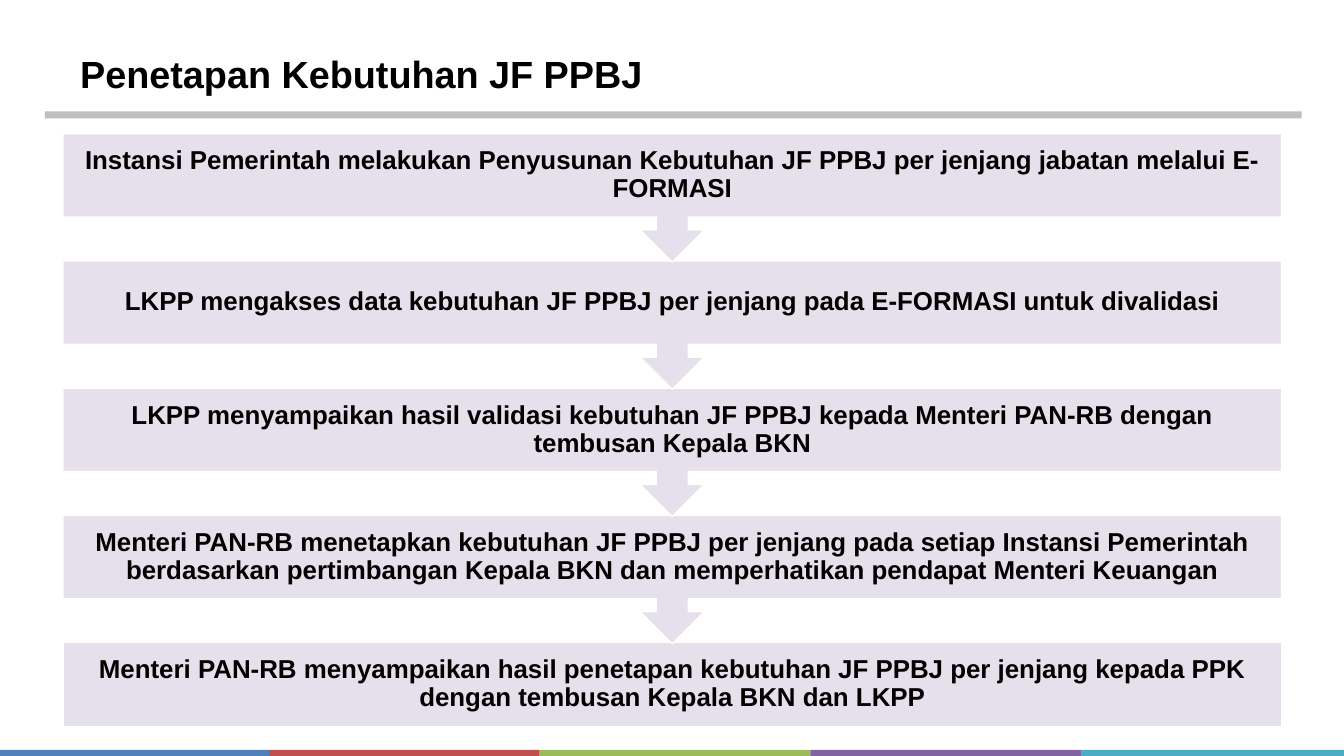
from dataclasses import dataclass

from pptx import Presentation
from pptx.dml.color import RGBColor
from pptx.enum.shapes import MSO_SHAPE
from pptx.enum.text import MSO_ANCHOR, PP_ALIGN
from pptx.util import Inches, Pt

RECT = MSO_SHAPE.RECTANGLE
CALLOUT = MSO_SHAPE.DOWN_ARROW_CALLOUT
TOP, MIDDLE = MSO_ANCHOR.TOP, MSO_ANCHOR.MIDDLE
LEFT, CENTER = PP_ALIGN.LEFT, PP_ALIGN.CENTER


@dataclass(frozen=True)
class Theme:
    """Colours, font and type sizes of the slide."""
    font: str = "Arial"
    title_size: int = 54
    step_size: int = 37
    text: str = "000000"
    rule: str = "BFBFBF"
    step: str = "E6E0EC"
    outline: str = "FFFFFF"
    stripes: tuple = ("4F81BD", "C0504D", "9BBB59", "8064A2", "4BACC6")


THEME = Theme()
TITLE = "Penetapan Kebutuhan JF PPBJ"
STEPS = (
    "Instansi Pemerintah melakukan Penyusunan Kebutuhan JF PPBJ per jenjang "
    "jabatan melalui E-FORMASI",
    "LKPP mengakses data kebutuhan JF PPBJ per jenjang pada E-FORMASI untuk "
    "divalidasi",
    "LKPP menyampaikan hasil validasi kebutuhan JF PPBJ kepada Menteri PAN-RB "
    "dengan tembusan Kepala BKN",
    "Menteri PAN-RB menetapkan kebutuhan JF PPBJ per jenjang pada setiap "
    "Instansi Pemerintah berdasarkan pertimbangan Kepala BKN dan "
    "memperhatikan pendapat Menteri Keuangan",
    "Menteri PAN-RB menyampaikan hasil penetapan kebutuhan JF PPBJ per jenjang "
    "kepada PPK dengan tembusan Kepala BKN dan LKPP",
)


def add_block(slide, kind, x, y, w, h, fill, outline=None):
    """Add a filled preset shape, outlined if a colour is given."""
    sp = slide.shapes.add_shape(kind, Inches(x), Inches(y), Inches(w), Inches(h))
    sp.shadow.inherit = False
    sp.fill.solid()
    sp.fill.fore_color.rgb = RGBColor.from_string(fill)
    if outline:
        sp.line.color.rgb = RGBColor.from_string(outline)
        sp.line.width = Pt(2)
    else:
        sp.line.fill.background()
    return sp


def write_text(sp, text, size, align=LEFT, anchor=TOP, inset=(0.1, 0.05), spacing=1.0):
    """Write one bold paragraph into a shape."""
    tf = sp.text_frame
    tf.word_wrap = True
    tf.vertical_anchor = anchor
    tf.margin_left = tf.margin_right = Inches(inset[0])
    tf.margin_top = tf.margin_bottom = Inches(inset[1])
    p = tf.paragraphs[0]
    p.alignment = align
    p.line_spacing = spacing
    r = p.add_run()
    r.text = text
    r.font.name = THEME.font
    r.font.size = Pt(size)
    r.font.bold = True
    r.font.color.rgb = RGBColor.from_string(THEME.text)


def add_stripes(slide):
    """Add the coloured band along the bottom edge."""
    w = 5.37
    for i, color in enumerate(THEME.stripes):
        add_block(slide, RECT, -0.03 + i * w, 14.88, w, 0.2, color)


def add_title(slide):
    """Add the title and the rule below it."""
    add_block(slide, RECT, 0.89, 2.21, 24.94, 0.14, THEME.rule)
    sp = slide.shapes.add_textbox(Inches(1.54), Inches(0.87), Inches(22.6), Inches(1.3))
    write_text(sp, TITLE, THEME.title_size, inset=(0.05, 0.13))


def add_steps(slide):
    """Stack the steps from the last up, so each arrow lies over the next box."""
    top, pitch, last = 2.65, 2.525, len(STEPS) - 1
    for i in range(last, -1, -1):
        kind, h = (RECT, 1.66) if i == last else (CALLOUT, 2.55)
        sp = add_block(slide, kind, 1.25, top + i * pitch, 24.18, h,
                       THEME.step, THEME.outline)
        write_text(sp, STEPS[i], THEME.step_size, align=CENTER, anchor=MIDDLE,
                   inset=(0.29, 0.29), spacing=0.9)


def main():
    """Build and save the slide."""
    prs = Presentation()
    prs.slide_width, prs.slide_height = Inches(26.67), Inches(15)
    slide = prs.slides.add_slide(prs.slide_layouts[6])
    add_stripes(slide)
    add_title(slide)
    add_steps(slide)
    prs.save("out.pptx")


if __name__ == "__main__":
    main()
